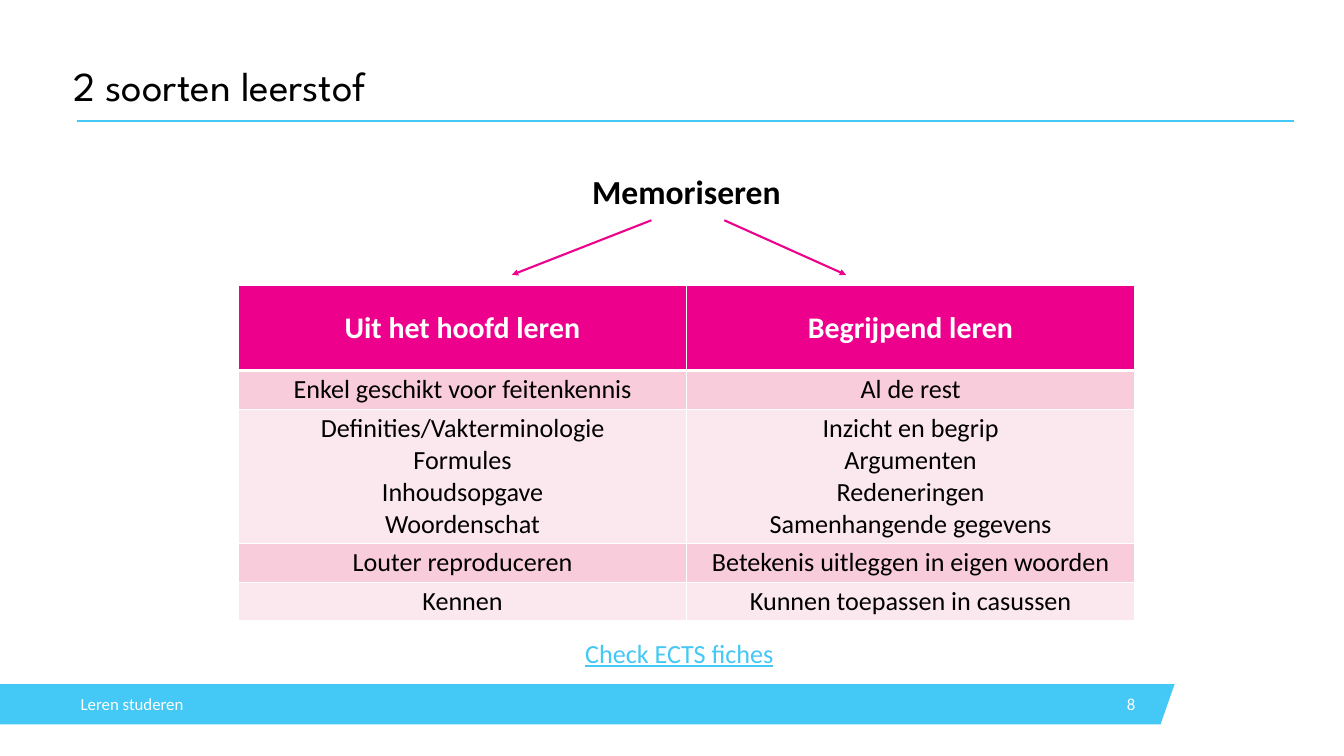
"""Builds a slide that compares two ways of memorising study material."""
from lxml.etree import SubElement
from pptx import Presentation
from pptx.dml.color import RGBColor
from pptx.enum.shapes import MSO_CONNECTOR as Connector
from pptx.enum.text import MSO_ANCHOR as Anchor, MSO_AUTO_SIZE as AutoSize, PP_ALIGN as Align
from pptx.oxml.ns import qn
from pptx.util import Pt

COLOURS = {
    "blue": "44C8F5",
    "pink": "EC008C",
    "rose": "F8CCDA",
    "pale": "FBE7EE",
    "white": "FFFFFF",
    "black": "000000",
}
BODY_FONT = "Calibri"
TITLE_FONT = "League Spartan"
HEADINGS = ["Uit het hoofd leren", "Begrijpend leren"]
ROWS = [
    (["Enkel geschikt voor feitenkennis"], ["Al de rest"]),
    (
        ["Definities/Vakterminologie", "Formules", "Inhoudsopgave", "Woordenschat"],
        ["Inzicht en begrip", "Argumenten", "Redeneringen", "Samenhangende gegevens"],
    ),
    (["Louter reproduceren"], ["Betekenis uitleggen in eigen woorden"]),
    (["Kennen"], ["Kunnen toepassen in casussen"]),
]
HEADER_HEIGHT = 91
LINE_HEIGHT = 34.2
CELL_PADDING = 7.2


def colour(name):
    return RGBColor.from_string(COLOURS[name])


def write(frame, lines, size, text_colour, align=Align.LEFT, font=BODY_FONT,
          bold=False, underline=False, spacing=None):
    for index, line in enumerate(lines):
        paragraph = frame.add_paragraph() if index else frame.paragraphs[0]
        paragraph.alignment = align
        paragraph.line_spacing = spacing
        run = paragraph.add_run()
        run.text = line
        run.font.name = font
        run.font.size = Pt(size)
        run.font.bold = bold
        run.font.underline = underline
        run.font.color.rgb = colour(text_colour)


def remove_insets(frame):
    frame.margin_left = frame.margin_right = 0
    frame.margin_top = frame.margin_bottom = 0


def add_text(slide, box, text, size, text_colour, anchor=Anchor.TOP, **style):
    frame = slide.shapes.add_textbox(*map(Pt, box)).text_frame
    frame.word_wrap = True
    frame.vertical_anchor = anchor
    write(frame, [text], size, text_colour, **style)
    return frame


def set_title(slide, box, text):
    title = slide.shapes.title
    title.left, title.top, title.width, title.height = map(Pt, box)
    frame = title.text_frame
    frame.auto_size = AutoSize.NONE
    frame.vertical_anchor = Anchor.MIDDLE
    remove_insets(frame)
    write(frame, [text], 44, "black", font=TITLE_FONT, spacing=0.9)


def add_line(slide, start, end, line_colour, arrow=False):
    line = slide.shapes.add_connector(Connector.STRAIGHT, *map(Pt, start + end))
    line.line.color.rgb = colour(line_colour)
    line.line.width = Pt(2.25)
    if arrow:
        SubElement(line.line._get_or_add_ln(), qn("a:tailEnd"), type="triangle")
    SubElement(line._element.spPr, qn("a:effectLst"))


def add_footer_band(slide):
    builder = slide.shapes.build_freeform(0, Pt(733), scale=1.0)
    corners = [(1258.5, 733), (1243.5, 776), (0, 776)]
    builder.add_line_segments([(Pt(x), Pt(y)) for x, y in corners], close=True)
    band = builder.convert_to_shape()
    band.shadow.inherit = False
    band.fill.solid()
    band.fill.fore_color.rgb = colour("blue")
    band.line.fill.background()


def set_borders(cell, bottom=1):
    properties = cell._tc.get_or_add_tcPr()
    for side, width in {"L": 1, "R": 1, "T": 1, "B": bottom}.items():
        border = SubElement(properties, qn(f"a:ln{side}"), w=str(Pt(width)))
        fill = SubElement(border, qn("a:solidFill"))
        SubElement(fill, qn("a:srgbClr"), val=COLOURS["white"])


def fill_cell(cell, lines, size, text_colour, fill, bold=False, bottom=1):
    set_borders(cell, bottom)
    cell.fill.solid()
    cell.fill.fore_color.rgb = colour(fill)
    cell.vertical_anchor = Anchor.MIDDLE
    write(cell.text_frame, lines, size, text_colour, align=Align.CENTER, bold=bold)


def add_comparison_table(slide):
    heights = [HEADER_HEIGHT]
    heights += [max(map(len, row)) * LINE_HEIGHT + CELL_PADDING for row in ROWS]
    table = slide.shapes.add_table(
        len(heights), len(HEADINGS), Pt(255.6), Pt(306), Pt(960), Pt(sum(heights))
    ).table
    for table_row, height in zip(table.rows, heights):
        table_row.height = Pt(height)
    for column, heading in enumerate(HEADINGS):
        fill_cell(table.cell(0, column), [heading], 32, "white", "pink", bold=True, bottom=3)
    for number, row in enumerate(ROWS, start=1):
        fill = "rose" if number % 2 else "pale"
        for column, lines in enumerate(row):
            fill_cell(table.cell(number, column), lines, 28, "black", fill)


def main():
    presentation = Presentation()
    presentation.slide_width, presentation.slide_height = Pt(1440), Pt(810)
    slide = presentation.slides.add_slide(presentation.slide_layouts[5])

    add_footer_band(slide)
    add_line(slide, (82, 129.6), (1386, 129.6), "blue")
    set_title(slide, (78.5, 70, 1305, 50), "2 soorten leerstof")
    add_text(slide, (83, 185, 1305, 481), "Memoriseren", 36, "black",
             align=Align.CENTER, bold=True, spacing=0.9)
    add_text(slide, (1145, 733, 78.5, 43), "8", 18, "white",
             anchor=Anchor.MIDDLE, align=Align.RIGHT)
    footer = add_text(slide, (86.4, 732.5, 486, 43), "Leren studeren", 18, "white",
                      anchor=Anchor.MIDDLE)
    remove_insets(footer)
    add_comparison_table(slide)
    add_line(slide, (698, 236), (548.5, 294.5), "pink", arrow=True)
    add_line(slide, (776, 236), (906.5, 294.5), "pink", arrow=True)
    add_text(slide, (620, 679, 221, 41), "Check ECTS fiches", 28, "blue", underline=True)

    presentation.save("out.pptx")


if __name__ == "__main__":
    main()
